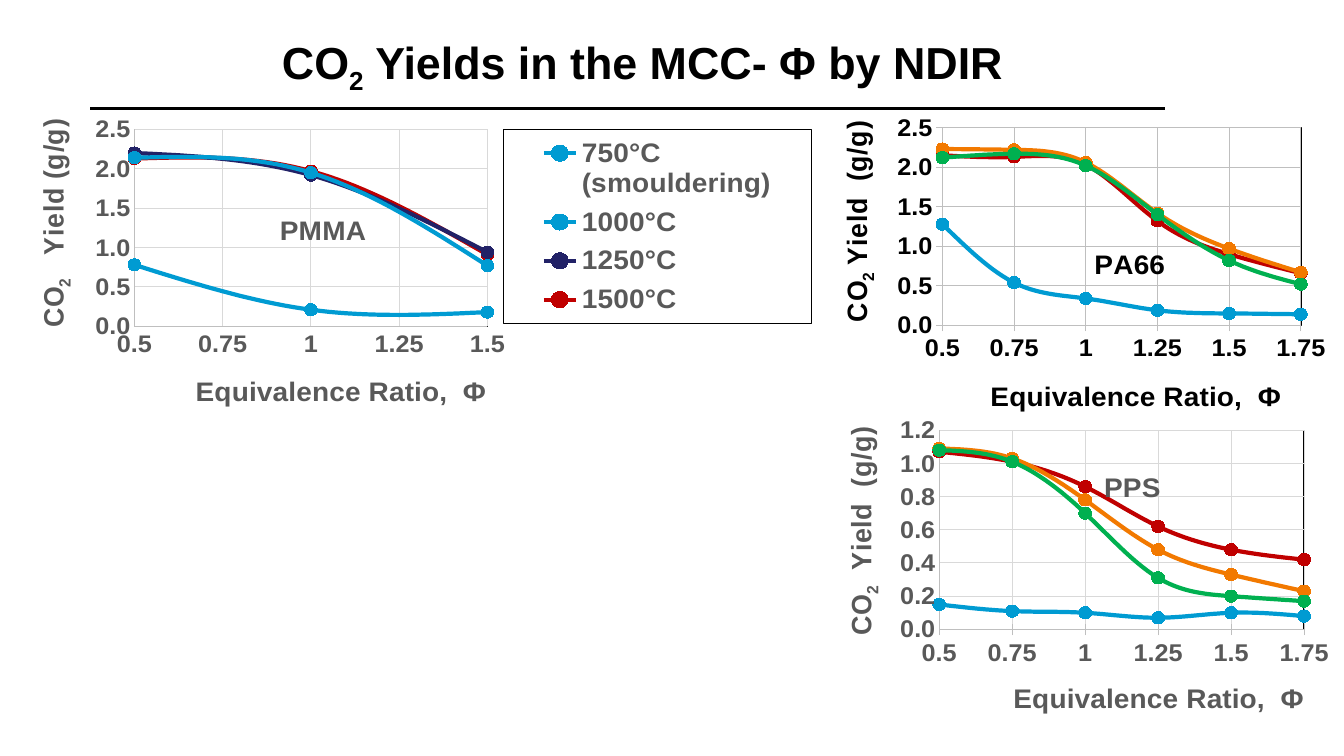
from dataclasses import dataclass

from lxml import etree
from pptx import Presentation
from pptx.chart.data import XyChartData
from pptx.dml.color import RGBColor
from pptx.enum.chart import XL_CHART_TYPE, XL_LEGEND_POSITION, XL_MARKER_STYLE, XL_TICK_MARK
from pptx.enum.shapes import MSO_CONNECTOR
from pptx.enum.text import MSO_ANCHOR, PP_ALIGN
from pptx.oxml import parse_xml
from pptx.oxml.ns import nsdecls, qn
from pptx.util import Inches, Pt

SCATTER = XL_CHART_TYPE.XY_SCATTER_SMOOTH
CIRCLE = XL_MARKER_STYLE.CIRCLE
NO_TICK, OUT_TICK, CROSS_TICK = XL_TICK_MARK.NONE, XL_TICK_MARK.OUTSIDE, XL_TICK_MARK.CROSS
WIDTH, HEIGHT = Inches(13.33), Inches(7.5)


@dataclass(frozen=True)
class Theme:
    font: str = "Arial"
    black: str = "000000"
    grey: str = "595959"
    axis: str = "BFBFBF"
    light: str = "D9D9D9"
    blue: str = "009BD2"
    green: str = "00B050"
    orange: str = "F27900"
    red: str = "C00000"
    navy: str = "222267"
    heading: int = 32
    label: int = 20
    tick: int = 18


THEME = Theme()


@dataclass
class YieldChart:
    """Boxes are percentages: box of the slide, the others of the chart."""
    material: str
    box: tuple
    plot: tuple
    material_at: tuple
    ratio_at: tuple
    yield_at: tuple
    yield_label: str
    ratios: list
    curves: list  # name, line colour, marker colour, yields
    top: float = None
    step: float = None
    ink: str = THEME.grey
    grid: str = THEME.light
    ratio_tick: int = NO_TICK
    yield_tick: int = NO_TICK
    legend: tuple = None


def on_slide(left, top, width, height):
    return [round(part * size / 100) for part, size in
            zip((left, top, width, height), (WIDTH, HEIGHT, WIDTH, HEIGHT))]


def style(font, size, color):
    font.name, font.size, font.bold = THEME.font, Pt(size), True
    font.color.rgb = RGBColor.from_string(color)


def write_formula(paragraph, rest, size, color):
    """CO2 with a lowered 2, followed by rest."""
    for text in ("CO", "2", rest):
        run = paragraph.add_run()
        run.text = text
        style(run.font, size, color)
        if text == "2":
            run.font._element.set("baseline", "-25000")


def place(element, box, inner=False):
    """Give a chart part a manual layout, in percent of the chart."""
    layout = element.find(qn("c:layout"))
    if layout is None:
        layout = etree.Element(qn("c:layout"))
        overlay = element.find(qn("c:overlay"))
        if overlay is None:
            element.insert(0, layout)
        else:
            overlay.addprevious(layout)
    manual = etree.SubElement(layout, qn("c:manualLayout"))
    settings = [("layoutTarget", "inner")] if inner else []
    settings += [("xMode", "edge"), ("yMode", "edge")]
    settings += [(key, str(round(share / 100, 4))) for key, share in zip("xywh", box)]
    for key, value in settings:
        etree.SubElement(manual, qn("c:" + key)).set("val", value)


def frame():
    return parse_xml(
        f'<c:spPr {nsdecls("c", "a")}><a:noFill/><a:ln w="12700"><a:solidFill>'
        f'<a:srgbClr val="{THEME.black}"/></a:solidFill></a:ln></c:spPr>')


def write_label(label, text, at, ink):
    paragraph = label.text_frame.paragraphs[0]
    paragraph.add_run().text = text
    style(paragraph.runs[0].font, THEME.label, ink)
    place(label._element, at)


def format_axis(axis, spec_chart, tick, number_format):
    axis.major_tick_mark, axis.minor_tick_mark = tick, NO_TICK
    axis.has_major_gridlines = True
    for line, color in ((axis.major_gridlines.format.line, spec_chart.grid),
                        (axis.format.line, THEME.axis)):
        line.color.rgb = RGBColor.from_string(color)
        line.width = Pt(0.75)
    labels = axis.tick_labels
    labels.number_format, labels.number_format_is_linked = number_format, False
    style(labels.font, THEME.tick, spec_chart.ink)


def format_curves(chart, curves):
    chart.plots[0].vary_by_categories = False
    for smooth in chart._chartSpace.iter(qn("c:smooth")):
        smooth.set("val", "1")
    for series, (_, color, marker_color, _) in zip(chart.plots[0].series, curves):
        line, marker = series.format.line, series.marker
        line.color.rgb = RGBColor.from_string(color)
        line.width = Pt(3)
        marker.style, marker.size = CIRCLE, 9
        marker.format.fill.solid()
        marker.format.fill.fore_color.rgb = RGBColor.from_string(marker_color)
        marker.format.line.color.rgb = RGBColor.from_string(marker_color)


def add_legend(chart, box, ink):
    chart.has_legend = True
    legend = chart.legend
    legend.position, legend.include_in_layout = XL_LEGEND_POSITION.RIGHT, False
    style(legend.font, THEME.label, ink)
    place(legend._element, box)
    legend._element.find(qn("c:overlay")).addnext(frame())


def add_yield_chart(slide, content):
    data = XyChartData()
    for name, _, _, yields in content.curves:
        curve = data.add_series(name)
        for ratio, co2 in zip(content.ratios, yields):
            curve.add_data_point(ratio, co2)
    chart = slide.shapes.add_chart(SCATTER, *on_slide(*content.box), data).chart
    chart.font.name, chart.font.size = THEME.font, Pt(10)
    format_curves(chart, content.curves)

    ratio_axis, yield_axis = chart.category_axis, chart.value_axis
    ratio_axis.minimum_scale, ratio_axis.maximum_scale = content.ratios[0], content.ratios[-1]
    ratio_axis.major_unit = 0.25
    if content.top:
        yield_axis.minimum_scale, yield_axis.maximum_scale = 0, content.top
        yield_axis.major_unit = content.step
    format_axis(ratio_axis, content, content.ratio_tick, "General")
    format_axis(yield_axis, content, content.yield_tick, "0.0")

    chart.has_title = True
    write_label(chart.chart_title, content.material, content.material_at, content.ink)
    write_label(ratio_axis.axis_title, "Equivalence Ratio,  Φ", content.ratio_at, content.ink)
    yield_title = yield_axis.axis_title
    write_formula(yield_title.text_frame.paragraphs[0], content.yield_label, THEME.label, content.ink)
    turned = yield_title.text_frame._txBody.bodyPr
    turned.set("rot", "-5400000")
    turned.set("vert", "horz")
    place(yield_title._element, content.yield_at)

    plot_area = chart._chartSpace.chart.plotArea
    place(plot_area, content.plot, inner=True)
    plot_area.append(frame())
    chart.has_legend = False
    if content.legend:
        add_legend(chart, content.legend, content.ink)


def add_heading(slide):
    heading = slide.shapes.title
    heading.left, heading.top, heading.width, heading.height = on_slide(9.38, 4.4, 76.9, 8.5)
    heading.text_frame.vertical_anchor = MSO_ANCHOR.MIDDLE
    paragraph = heading.text_frame.paragraphs[0]
    paragraph.alignment = PP_ALIGN.CENTER
    write_formula(paragraph, " Yields in the MCC- Φ by NDIR", THEME.heading, THEME.black)
    left, top, width, _ = on_slide(6.7, 14.4, 80, 0)
    rule = slide.shapes.add_connector(MSO_CONNECTOR.STRAIGHT, left, top, left + width, top)
    rule.line.color.rgb = RGBColor.from_string(THEME.black)
    rule.line.width = Pt(2.25)
    etree.SubElement(rule._element.spPr, qn("a:effectLst"))


def numbered_curves(*yields):
    colors = (THEME.blue, THEME.green, THEME.orange, THEME.red)
    return [(f"Series {number}", color, color, values)
            for number, (color, values) in enumerate(zip(colors, yields), 1)]


RATIOS = [0.5, 0.75, 1, 1.25, 1.5, 1.75]
CHARTS = [
    YieldChart("PMMA", (1.88, 15.33, 59.7, 39.6), (13.6, 4, 44, 69),
               (31.1, 31.8), (20.6, 88), (1, 1.7), "   Yield (g/g)", [0.5, 1, 1.5],
               [("750°C (smouldering)", THEME.blue, THEME.blue, [0.78, 0.21, 0.18]),
                ("1000°C", THEME.blue, THEME.green, [2.14, 1.95, 0.77]),
                ("1250°C", THEME.navy, THEME.navy, [2.2, 1.92, 0.94]),
                ("1500°C", THEME.red, THEME.red, [2.13, 1.97, 0.91])],
               top=2.5, step=0.5, legend=(59.6, 4, 38.4, 68)),
    YieldChart("PA66", (61.9, 15.1, 37.2, 40.5), (22.1, 3.4, 71.7, 67.7),
               (51.5, 42.8), (30.7, 87.8), (1, 2.3), " Yield  (g/g)", RATIOS,
               numbered_curves([1.28, 0.54, 0.34, 0.19, 0.15, 0.14],
                               [2.12, 2.17, 2.02, 1.4, 0.82, 0.52],
                               [2.23, 2.22, 2.06, 1.42, 0.97, 0.67],
                               [2.15, 2.13, 2.03, 1.32, 0.9, 0.66]),
               top=2.5, step=0.5, ink=THEME.black, grid=THEME.axis,
               ratio_tick=OUT_TICK, yield_tick=OUT_TICK),
    YieldChart("PPS", (61.9, 55.1, 37.5, 40.5), (21.3, 4.4, 72.4, 67.7),
               (53, 16.2), (35, 88), (1.8, 4), "  Yield  (g/g)", RATIOS,
               numbered_curves([0.15, 0.11, 0.1, 0.07, 0.1, 0.08],
                               [1.08, 1.01, 0.7, 0.31, 0.2, 0.17],
                               [1.09, 1.03, 0.78, 0.48, 0.33, 0.23],
                               [1.07, 1.01, 0.86, 0.62, 0.48, 0.42]),
               ratio_tick=CROSS_TICK),
]


def main():
    deck = Presentation()
    deck.slide_width, deck.slide_height = WIDTH, HEIGHT
    slide = deck.slides.add_slide(deck.slide_layouts[5])
    add_heading(slide)
    for content in CHARTS:
        add_yield_chart(slide, content)
    deck.save("out.pptx")


if __name__ == "__main__":
    main()
